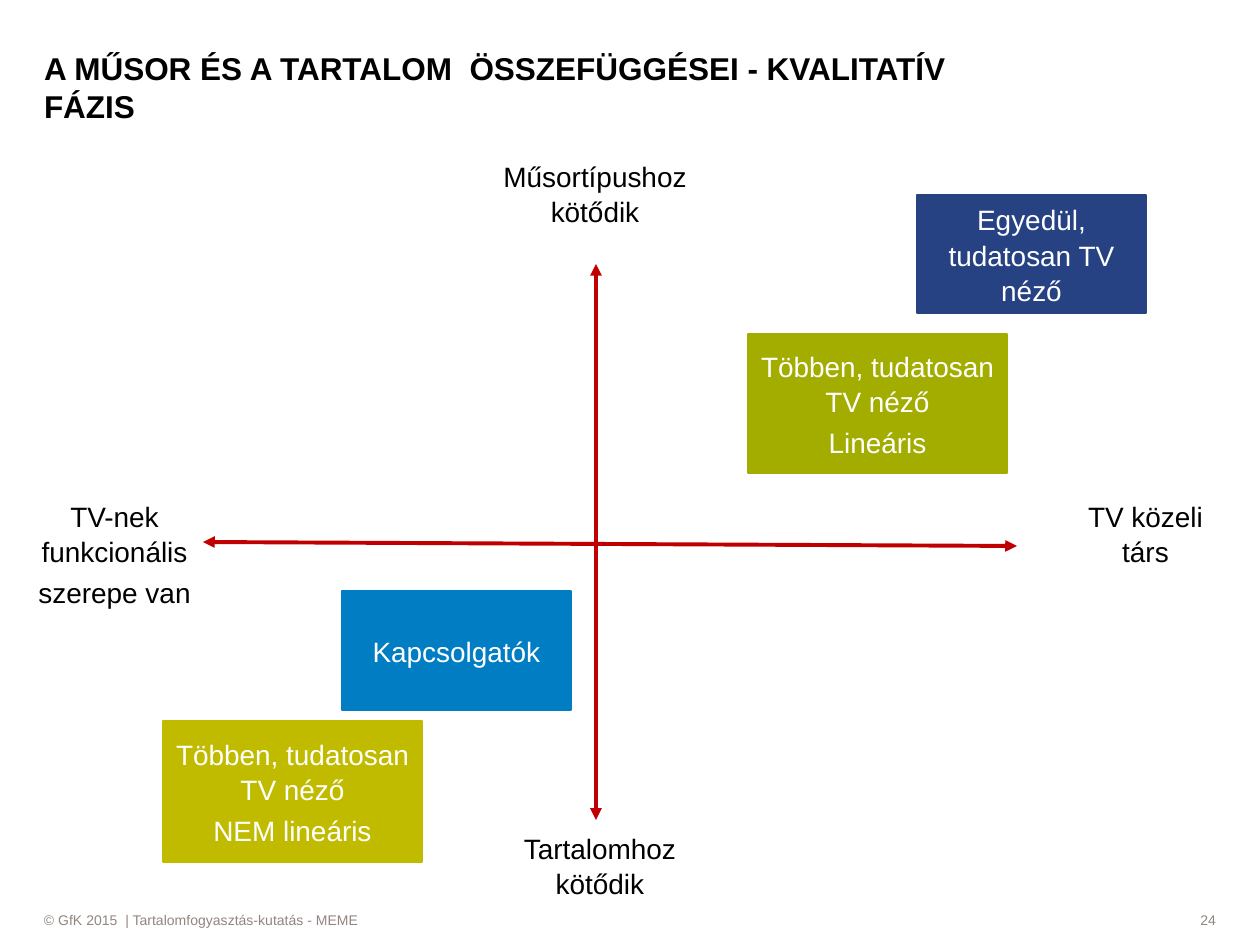
from lxml.etree import SubElement
from pptx import Presentation
from pptx.dml.color import RGBColor
from pptx.enum.shapes import MSO_CONNECTOR, MSO_SHAPE
from pptx.enum.text import MSO_ANCHOR, MSO_AUTO_SIZE, PP_ALIGN
from pptx.oxml.ns import qn
from pptx.util import Pt

PX = 914400 / 126


def color(code):
    return RGBColor.from_string(code)


def write(shape, text, size, ink, align, anchor, inset=0, bold=False):
    frame = shape.text_frame
    frame.text = text
    frame.word_wrap = True
    frame.auto_size = MSO_AUTO_SIZE.NONE
    frame.vertical_anchor = anchor
    frame.margin_left = frame.margin_right = round(2 * inset * PX)
    frame.margin_top = frame.margin_bottom = round(inset * PX)
    for i, para in enumerate(frame.paragraphs):
        para.alignment = align
        para.space_before = Pt(3 if i else 0)
        para.line_spacing = 1.05 if size == 16 else 1.0
        for run in para.runs:
            run.font.name = "Arial"
            run.font.size = Pt(size)
            run.font.bold = bold
            run.font.color.rgb = color(ink)


deck = Presentation()
deck.slide_width = round(1260 * PX)
deck.slide_height = round(945 * PX)
slide = deck.slides.add_slide(deck.slide_layouts[5])
shapes = slide.shapes

title = shapes.title
title.left, title.top, title.width, title.height = [round(n * PX) for n in (44, 35, 988, 90)]
write(title, "A MŰSOR ÉS A TARTALOM  ÖSSZEFÜGGÉSEI - KVALITATÍV FÁZIS",
      18, "000000", PP_ALIGN.LEFT, MSO_ANCHOR.BOTTOM, bold=True)

feet = [
    ("© GfK 2015  | Tartalomfogyasztás-kutatás - MEME", 44, 973, PP_ALIGN.LEFT),
    ("24", 1037, 179, PP_ALIGN.RIGHT),
]
for text, left, width, align in feet:
    foot = shapes.add_textbox(*[round(n * PX) for n in (left, 910, width, 20)])
    write(foot, text, 8, "928580", align, MSO_ANCHOR.MIDDLE)

for ends in [(203, 542, 1017, 546), (596, 264, 596, 820)]:
    axis = shapes.add_connector(MSO_CONNECTOR.STRAIGHT, *[round(n * PX) for n in ends])
    axis.line.color.rgb = color("C00000")
    axis.line.width = Pt(2.25)
    line = axis.line._get_or_add_ln()
    for tag in ("a:headEnd", "a:tailEnd"):
        SubElement(line, qn(tag), type="triangle")
    SubElement(axis._element.spPr, qn("a:effectLst"))

labels = [
    ("TV közeli társ", 1066, 498, 159, 126),
    ("TV-nek funkcionális\nszerepe van", 35, 498, 159, 126),
    ("Tartalomhoz kötődik", 481, 830, 238, 63),
    ("Műsortípushoz kötődik", 461, 158, 268, 126),
]
for text, *area in labels:
    label = shapes.add_textbox(*[round(n * PX) for n in area])
    write(label, text, 16, "000000", PP_ALIGN.CENTER, MSO_ANCHOR.TOP)

groups = [
    ("Egyedül, tudatosan TV néző", "264283", 917, 195, 229, 118),
    ("Kapcsolgatók", "007DC3", 342, 591, 229, 119),
    ("Többen, tudatosan TV néző\nNEM lineáris", "C1BB00", 163, 721, 259, 141),
    ("Többen, tudatosan TV néző\nLineáris", "A2AD00", 748, 334, 259, 139),
]
for text, fill, *area in groups:
    box = shapes.add_shape(MSO_SHAPE.RECTANGLE, *[round(n * PX) for n in area])
    box.shadow.inherit = False
    box.fill.solid()
    box.fill.fore_color.rgb = color(fill)
    box.line.color.rgb = color(fill)
    box.line.width = Pt(0.75)
    write(box, text, 16, "FFFFFF", PP_ALIGN.CENTER, MSO_ANCHOR.MIDDLE, inset=6)

deck.save("out.pptx")
